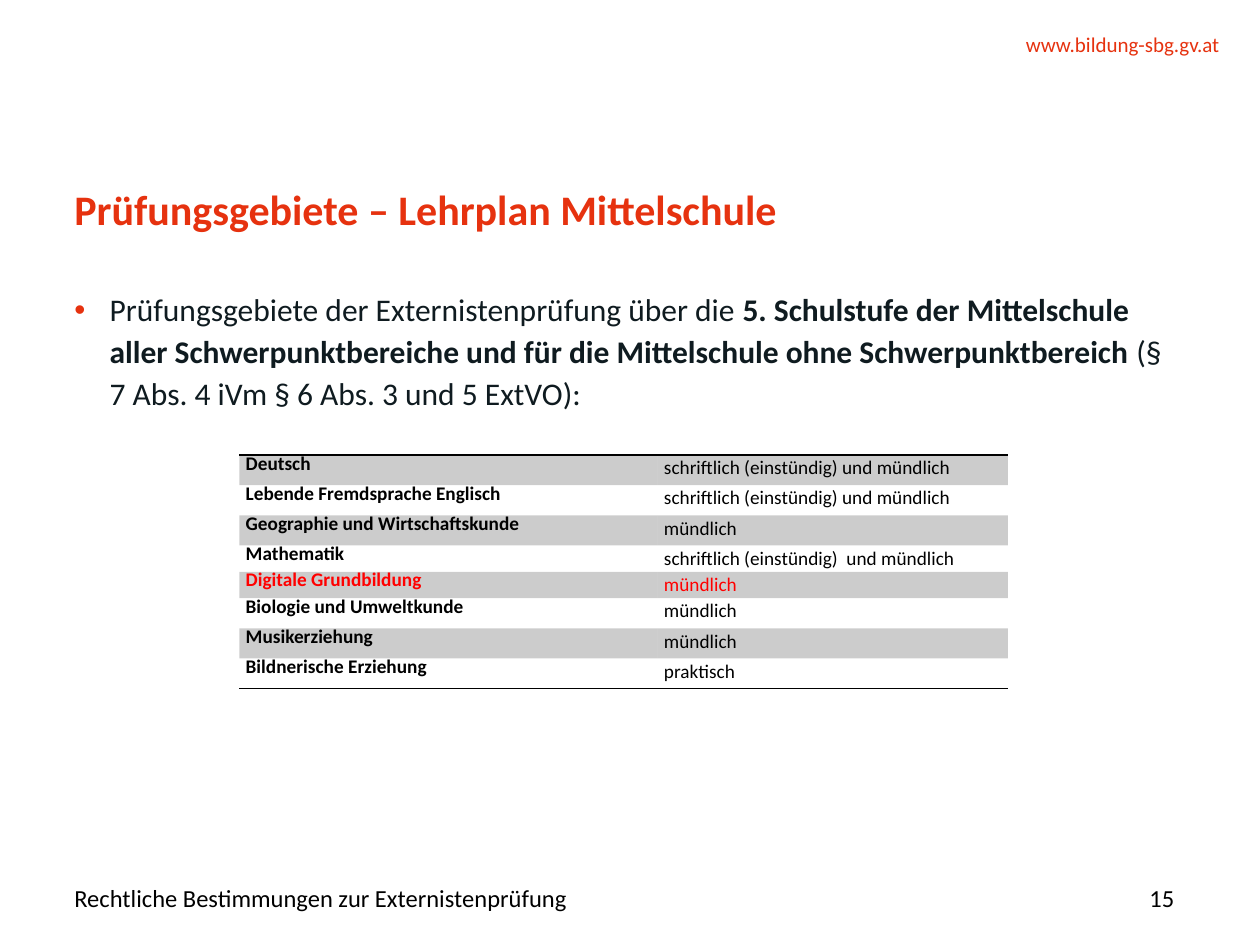
from lxml.etree import SubElement
from pptx import Presentation
from pptx.dml.color import RGBColor
from pptx.enum.text import MSO_ANCHOR, MSO_AUTO_SIZE, PP_ALIGN
from pptx.oxml import parse_xml
from pptx.oxml.ns import nsdecls, qn
from pptx.util import Inches, Pt

INK = {"red": "E6320F", "dark": "0F1B20", "black": "000000", "alert": "FF0000"}
FONT = "Calibri"
PLAIN = "{2D5ABB26-0587-4C30-8999-92F81FD0307C}"

TITLE = "Prüfungsgebiete – Lehrplan Mittelschule"
BODY = [
    ("Prüfungsgebiete der Externistenprüfung über die ", False),
    ("5. Schulstufe der Mittelschule aller Schwerpunktbereiche und für die "
     "Mittelschule ohne Schwerpunktbereich ", True),
    ("(§ 7 Abs. 4 iVm § 6 Abs. 3 und 5 ExtVO):", False),
]
LABELS = [
    ("www.bildung-sbg.gv.at", (7.27, 0.25, 2.41, 0.2), 12, "red",
     PP_ALIGN.RIGHT, MSO_ANCHOR.TOP),
    ("Rechtliche Bestimmungen zur Externistenprüfung", (0.59, 6.98, 7.52, 0.29),
     14, "black", PP_ALIGN.LEFT, MSO_ANCHOR.MIDDLE),
    ("15", (8.43, 6.98, 0.89, 0.29), 14, "black",
     PP_ALIGN.RIGHT, MSO_ANCHOR.MIDDLE),
]
EXAMS = [
    ("Deutsch", "schriftlich (einstündig) und mündlich", 0.24, "black"),
    ("Lebende Fremdsprache Englisch", "schriftlich (einstündig) und mündlich",
     0.24, "black"),
    ("Geographie und Wirtschaftskunde", "mündlich", 0.24, "black"),
    ("Mathematik", "schriftlich (einstündig)  und mündlich", 0.17, "black"),
    ("Digitale Grundbildung", "mündlich", 0.17, "alert"),
    ("Biologie und Umweltkunde", "mündlich", 0.24, "black"),
    ("Musikerziehung", "mündlich", 0.24, "black"),
    ("Bildnerische Erziehung", "praktisch", 0.24, "black"),
]
WIDTHS = (3.32, 2.78)


def place(shape, box):
    shape.left, shape.top, shape.width, shape.height = map(Inches, box)


def frame(shape, anchor=MSO_ANCHOR.TOP):
    text = shape.text_frame
    text.margin_left = text.margin_right = 0
    text.margin_top = text.margin_bottom = 0
    text.word_wrap = True
    text.auto_size = MSO_AUTO_SIZE.NONE
    text.vertical_anchor = anchor
    return text.paragraphs[0]


def write(para, words, size, color, bold=False):
    run = para.add_run()
    run.text = words
    run.font.name = FONT
    run.font.size = Pt(size)
    run.font.bold = bold
    run.font.color.rgb = RGBColor.from_string(INK[color])


def bullet(para, color):
    props = para._p.get_or_add_pPr()
    props.set("marL", str(Inches(0.28)))
    props.set("indent", str(-Inches(0.28)))
    tint = SubElement(props, qn("a:buClr"))
    SubElement(tint, qn("a:srgbClr")).set("val", INK[color])
    SubElement(props, qn("a:buFont")).set("typeface", "Arial")
    SubElement(props, qn("a:buChar")).set("char", "•")


def shade(cell):
    cell.fill.solid()
    cell.fill.fore_color.rgb = RGBColor.from_string(INK["black"])
    tint = cell._tc.tcPr.find(".//" + qn("a:srgbClr"))
    SubElement(tint, qn("a:alpha")).set("val", "20000")


def rule(cell, side):
    cell._tc.get_or_add_tcPr().insert(0, parse_xml(
        f'<a:{side} {nsdecls("a")} w="{Pt(1)}"><a:solidFill>'
        f'<a:srgbClr val="{INK["black"]}"/></a:solidFill></a:{side}>'))


def fill_table(slide):
    high = sum(row[2] for row in EXAMS)
    grid = slide.shapes.add_table(
        len(EXAMS), len(WIDTHS), Inches(1.9), Inches(3.61),
        Inches(sum(WIDTHS)), Inches(high)).table
    grid.first_row = grid.horz_banding = False
    grid._tbl.tblPr.find(qn("a:tableStyleId")).text = PLAIN
    for col, width in zip(grid.columns, WIDTHS):
        col.width = Inches(width)
    for i, (topic, mode, height, color) in enumerate(EXAMS):
        grid.rows[i].height = Inches(height)
        for j, words in enumerate((topic, mode)):
            cell = grid.cell(i, j)
            cell.margin_left = Inches(0.05)
            cell.margin_right = cell.margin_top = Inches(0.01)
            cell.margin_bottom = Inches(0.01)
            para = cell.text_frame.paragraphs[0]
            if j == 0:
                para.line_spacing = Pt(11)
            write(para, words, 11, color, j == 0)
            if i % 2 == 0:
                shade(cell)
            else:
                cell.fill.background()
            if i == 0:
                rule(cell, "lnT")
            if i == len(EXAMS) - 1:
                rule(cell, "lnB")


def main():
    deck = Presentation()
    deck.slide_width, deck.slide_height = Inches(10), Inches(7.5)
    slide = deck.slides.add_slide(deck.slide_layouts[1])

    title, body = slide.placeholders
    place(title, (0.59, 1.44, 8.73, 0.91))
    para = frame(title)
    para.alignment = PP_ALIGN.LEFT
    para.line_spacing = Pt(30)
    write(para, TITLE, 24, "red", True)

    place(body, (0.59, 2.27, 8.81, 4.29))
    para = frame(body)
    para.line_spacing = Pt(24)
    para.space_before = Pt(0)
    para.space_after = Pt(14.2)
    bullet(para, "red")
    for words, bold in BODY:
        write(para, words, 18, "dark", bold)

    for words, box, size, color, align, anchor in LABELS:
        para = frame(slide.shapes.add_textbox(*map(Inches, box)), anchor)
        para.alignment = align
        write(para, words, size, color)

    fill_table(slide)
    deck.save("out.pptx")


if __name__ == "__main__":
    main()
